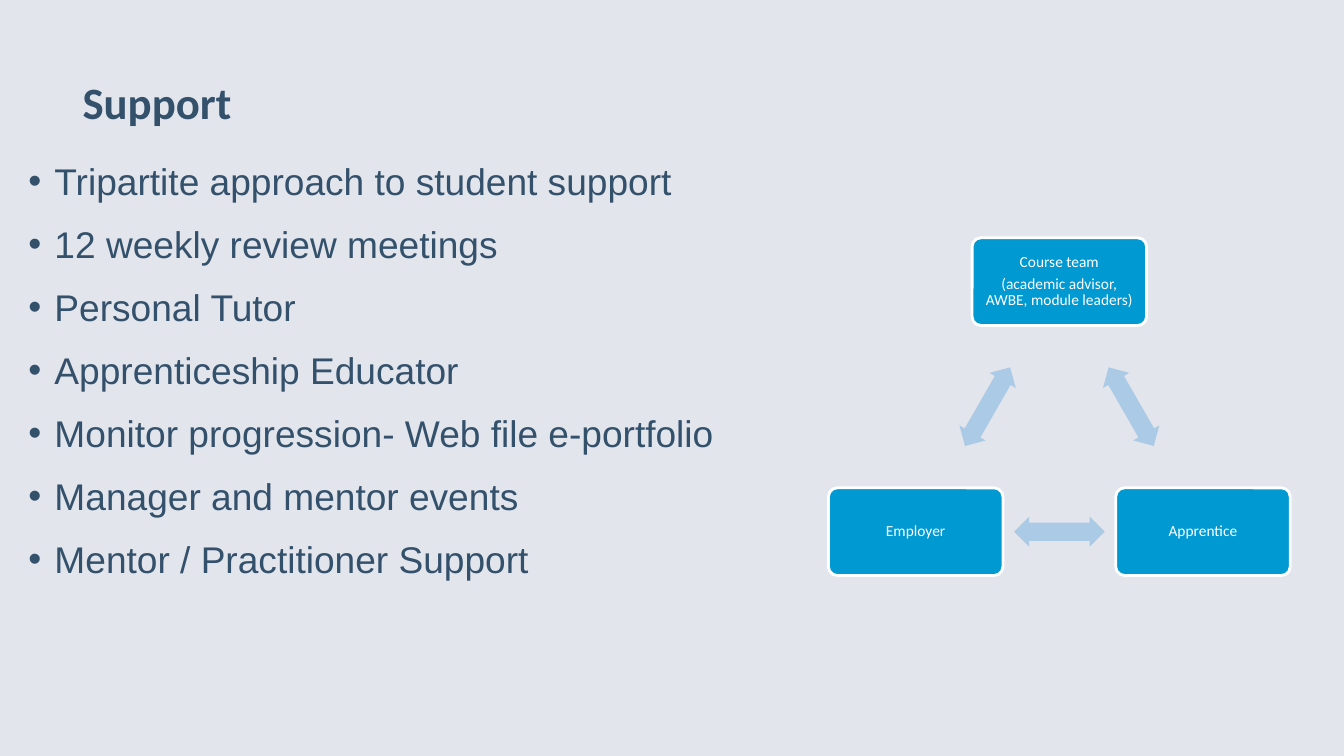
import math
from itertools import combinations

from lxml import etree
from pptx import Presentation
from pptx.dml.color import RGBColor
from pptx.enum import shapes, text
from pptx.oxml import ns
from pptx.util import Pt

INK, BLUE, PALE, WHITE, BACK = "34516C", "0099D2", "ABCAE5", "FEFFFF", "E3E5ED"
POINTS = [
    "Tripartite approach to student support",
    "12 weekly review meetings",
    "Personal Tutor",
    "Apprenticeship Educator",
    "Monitor progression- Web file e-portfolio",
    "Manager and mentor events",
    "Mentor / Practitioner Support",
]
TEAM = ["Course team", "(academic advisor, AWBE, module leaders)"]


def paint(fill, color):
    fill.solid()
    fill.fore_color.rgb = RGBColor.from_string(color)


def bullet(para, indent):
    props = para._p.get_or_add_pPr()
    props.set("marL", str(Pt(indent)))
    props.set("indent", str(-Pt(indent)))
    etree.SubElement(props, ns.qn("a:buFont"), typeface="Arial")
    etree.SubElement(props, ns.qn("a:buChar"), char="•")


def write(shape, lines, size, color, font="Calibri", bold=False, inset=0,
          align="LEFT", anchor="TOP", spacing=1.0, before=0, after=0, indent=0):
    """Fill a shape with one paragraph per line, all in one format."""
    frame = shape.text_frame
    frame.word_wrap = True
    frame.auto_size = text.MSO_AUTO_SIZE.NONE
    frame.vertical_anchor = text.MSO_ANCHOR[anchor]
    frame.margin_left = frame.margin_right = Pt(inset)
    frame.margin_top = frame.margin_bottom = Pt(inset)
    for i, line in enumerate(lines):
        para = frame.add_paragraph() if i else frame.paragraphs[0]
        if indent:
            bullet(para, indent)
        para.alignment = text.PP_ALIGN[align]
        para.line_spacing = spacing
        para.space_before = Pt(before if i else 0)
        para.space_after = Pt(after)
        run = para.add_run()
        run.text = line
        run.font.size, run.font.name, run.font.bold = Pt(size), font, bold
        paint(run.font.fill, color)


def place(shape, left, top, width, height):
    shape.left, shape.top = Pt(left), Pt(top)
    shape.width, shape.height = Pt(width), Pt(height)


def title(slide, box):
    shape = slide.shapes.title
    place(shape, *box)
    write(shape, ["Support"], 32, INK, bold=True, anchor="BOTTOM", spacing=0.9)


def body(slide, box):
    shape = slide.placeholders[1]
    place(shape, *box)
    write(shape, POINTS, 26.5, INK, font="Arial", spacing=1.04,
          before=12, indent=18.7)


def block(slide, kind, center, width, height, color):
    """Add a plain filled shape around a center point."""
    x, y = center
    shape = slide.shapes.add_shape(
        kind, Pt(x - width / 2), Pt(y - height / 2), Pt(width), Pt(height))
    shape.shadow.inherit = False
    paint(shape.fill, color)
    shape.line.fill.background()
    return shape


def node(slide, center, width, height, lines):
    shape = block(slide, shapes.MSO_SHAPE.ROUNDED_RECTANGLE,
                  center, width, height, BLUE)
    shape.adjustments[0] = 0.1
    paint(shape.line.fill, WHITE)
    shape.line.width = Pt(2)
    write(shape, lines, 11, WHITE, inset=3.6, align="CENTER",
          anchor="MIDDLE", spacing=0.9, after=3.85)


def arrow(slide, start, end):
    """Center a double arrow between two points, turned along their line."""
    (x1, y1), (x2, y2) = start, end
    shape = block(slide, shapes.MSO_SHAPE.LEFT_RIGHT_ARROW,
                  ((x1 + x2) / 2, (y1 + y2) / 2), 64.8, 21.6, PALE)
    shape.adjustments[0], shape.adjustments[1] = 0.6, 0.5
    shape.rotation = math.degrees(math.atan2(y2 - y1, x2 - x1))


def triangle(slide, box):
    """Draw three nodes at the corners of the box, joined by arrows."""
    left, top, width, height = box
    wide, high = 124.6, 62.6
    base = top + height - high / 2
    spots = [
        (left + width / 2, top + high / 2),
        (left + width - wide / 2, base),
        (left + wide / 2, base),
    ]
    for spot, lines in zip(spots, [TEAM, ["Apprentice"], ["Employer"]]):
        node(slide, spot, wide, high, lines)
    for start, end in combinations(spots, 2):
        arrow(slide, start, end)


def main():
    deck = Presentation()
    deck.slide_width, deck.slide_height = Pt(960), Pt(540)
    slide = deck.slides.add_slide(deck.slide_layouts[1])
    paint(slide.background.fill, BACK)
    title(slide, (59, 24.5, 670, 67.7))
    body(slide, (20.2, 111.6, 670, 356.4))
    triangle(slide, (591.8, 169.9, 329.8, 241.2))
    deck.save("out.pptx")


if __name__ == "__main__":
    main()
